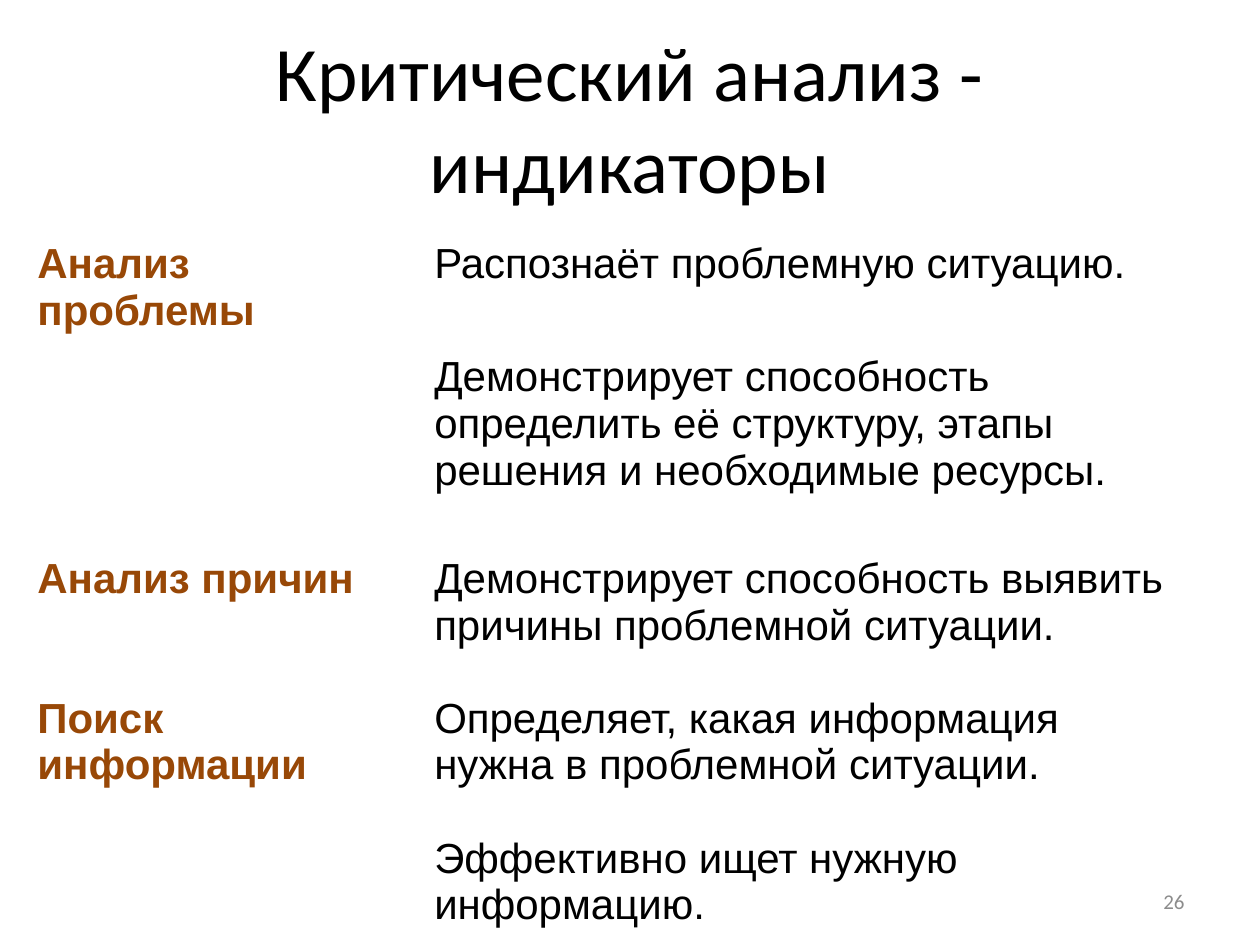
from pptx import Presentation
from pptx.dml.color import RGBColor
from pptx.enum.text import MSO_ANCHOR, MSO_AUTO_SIZE, PP_ALIGN
from pptx.util import Cm, Pt


def write(tf, text, size=24, font="Arial", color="000000", bold=False,
          align=PP_ALIGN.LEFT):
    p = tf.paragraphs[0]
    p.alignment = align
    r = p.add_run()
    r.text = text
    r.font.size = Pt(size)
    r.font.name = font
    r.font.bold = bold
    r.font.color.rgb = RGBColor.from_string(color)


prs = Presentation()
prs.slide_width, prs.slide_height = Cm(25.4), Cm(19.05)
s = prs.slides.add_slide(prs.slide_layouts[5])

title = s.shapes.title
title.left, title.top, title.width, title.height = Cm(1.27), Cm(0.76), Cm(22.86), Cm(3.18)
tf = title.text_frame
tf.auto_size = MSO_AUTO_SIZE.NONE
tf.vertical_anchor = MSO_ANCHOR.MIDDLE
write(tf, "Критический анализ - индикаторы", size=44, font="Calibri", align=PP_ALIGN.CENTER)

number = s.shapes.add_textbox(Cm(18.2), Cm(17.66), Cm(5.93), Cm(1.01))
tf = number.text_frame
tf.word_wrap = True
tf.vertical_anchor = MSO_ANCHOR.MIDDLE
write(tf, "26", size=12, font="Calibri", color="8C8C8C", align=PP_ALIGN.RIGHT)

rows = [
    (1.55, "Анализ проблемы", "Распознаёт проблемную ситуацию."),
    (4.06, "", "Демонстрирует способность определить её структуру, этапы решения "
               "и необходимые ресурсы."),
    (2.82, "Анализ причин", "Демонстрирует способность выявить причины проблемной ситуации."),
    (2.82, "Поиск информации", "Определяет, какая информация нужна в проблемной ситуации."),
    (1.55, "", "Эффективно ищет нужную информацию."),
]
table = s.shapes.add_table(len(rows), 2, Cm(0.5), Cm(4.72), Cm(23.62), Cm(12.8)).table
table.first_row = table.horz_banding = False
table.columns[0].width, table.columns[1].width = Cm(8), Cm(15.62)

for i, (height, skill, indicator) in enumerate(rows):
    table.rows[i].height = Cm(height)
    for j, text in enumerate((skill, indicator)):
        cell = table.cell(i, j)
        cell.fill.background()
        if text:
            write(cell.text_frame, text, color="000000" if j else "984807", bold=j == 0)

prs.save("out.pptx")
